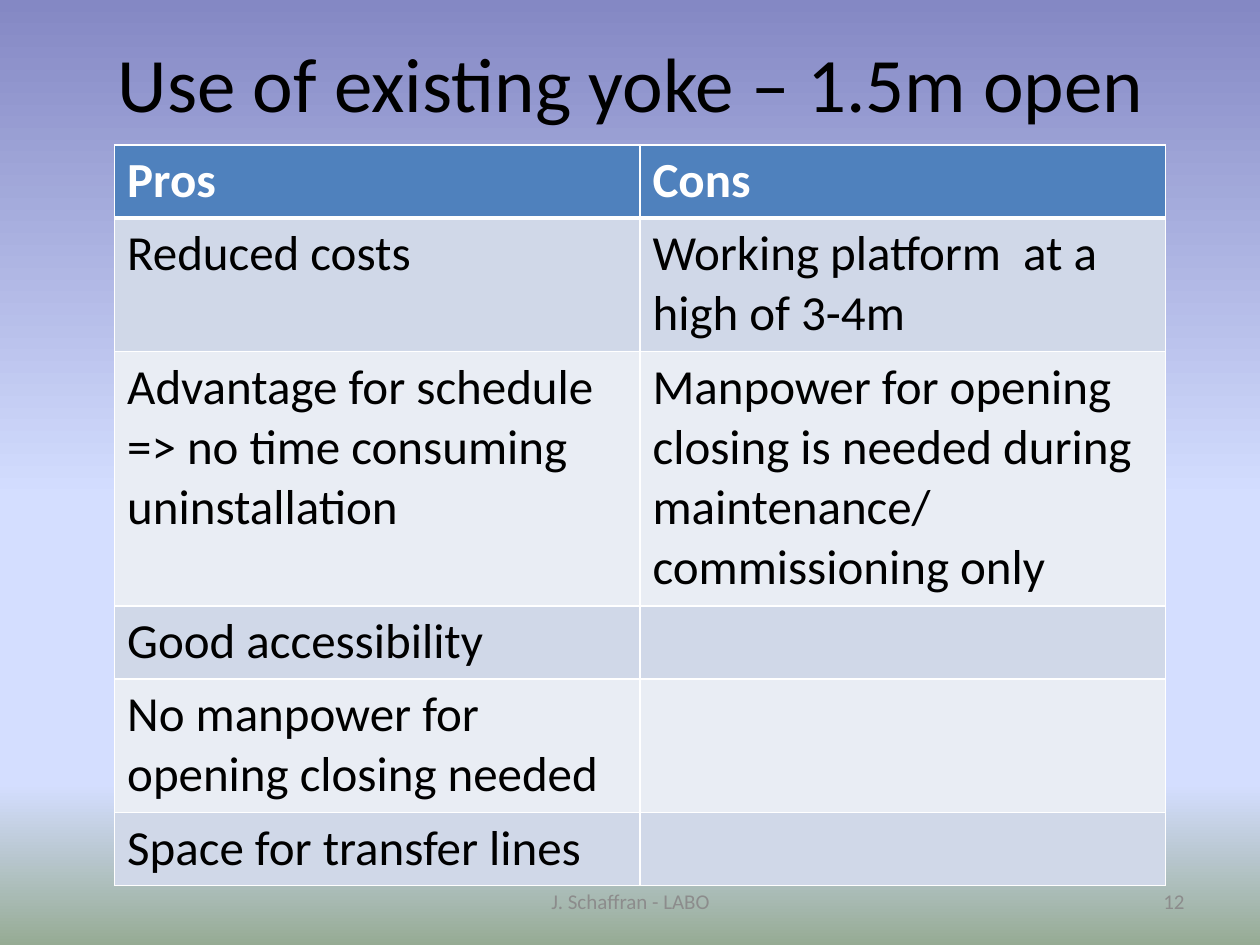
"""Build the slide that weighs the pros and cons of the existing yoke."""
from lxml import etree
from pptx import Presentation
from pptx.dml.color import RGBColor
from pptx.enum.text import MSO_ANCHOR, PP_ALIGN
from pptx.oxml.ns import qn
from pptx.util import Inches, Pt

MID = MSO_ANCHOR.MIDDLE
MEAN, RIGHT, LEFT = PP_ALIGN.CENTER, PP_ALIGN.RIGHT, PP_ALIGN.LEFT
HUES = {"ink": "000000", "pale": "FFFFFF", "head": "4F81BD",
        "odd": "D0D8E8", "even": "E9EDF4", "foot": "8C8C8C"}
SKY = [(0, "8488C4"), (53, "D4DEFF"), (83, "D4DEFF"), (100, "96AB94")]
ROWS = [
    ("Pros", "Cons", 1),
    ("Reduced costs", "Working platform  at a high of 3-4m", 2),
    ("Advantage for schedule => no time consuming uninstallation",
     "Manpower for opening closing is needed during maintenance/ commissioning only", 4),
    ("Good accessibility", "", 1),
    ("No manpower for opening closing needed", "", 2),
    ("Space for transfer lines", "", 1),
]
LABELS = [
    ("Use of existing yoke – 1.5m open", (0.51, 0.02, 9, 1.25), 44, "ink", MEAN),
    ("J. Schaffran - LABO", (3.42, 6.95, 3.17, 0.4), 12, "foot", MEAN),
    ("12", (7.17, 6.95, 2.33, 0.4), 12, "foot", RIGHT),
]
LINE, PAD, COL = 0.48, 0.1, 4.17


def write(frame, text, size, hue, side, bold=False):
    para = frame.paragraphs[0]
    para.alignment = side
    run = para.add_run()
    run.text = text
    for key, val in {"name": "Calibri", "size": Pt(size), "bold": bold}.items():
        setattr(run.font, key, val)
    run.font.color.rgb = RGBColor.from_string(HUES[hue])


def paint(node, hue):
    fill = etree.SubElement(node, qn("a:solidFill"))
    etree.SubElement(fill, qn("a:srgbClr"), val=hue)


deck = Presentation()
deck.slide_width, deck.slide_height = Inches(10), Inches(7.5)
slide = deck.slides.add_slide(deck.slide_layouts[6])

back = slide.background.fill
back.gradient()
back.gradient_angle = 270
stops = next(slide.element.iter(qn("a:gsLst")))
for old in list(stops):
    stops.remove(old)
for share, hue in SKY:
    stop = etree.SubElement(stops, qn("a:gs"), pos=str(share * 1000))
    etree.SubElement(stop, qn("a:srgbClr"), val=hue)

for text, place, size, hue, side in LABELS:
    frame = slide.shapes.add_textbox(*map(Inches, place)).text_frame
    frame.word_wrap = True
    frame.vertical_anchor = MID
    write(frame, text, size, hue, side)

high = sum(PAD + LINE * row[2] for row in ROWS)
grid = slide.shapes.add_table(len(ROWS), 2, Inches(0.91), Inches(1.15),
                              Inches(2 * COL), Inches(high)).table
for col in grid.columns:
    col.width = Inches(COL)
for r, (*words, lines) in enumerate(ROWS):
    grid.rows[r].height = Inches(PAD + LINE * lines)
    top = r == 0
    shade = "head" if top else "odd" if r % 2 else "even"
    for c, text in enumerate(words):
        cell = grid.cell(r, c)
        cell.fill.solid()
        cell.fill.fore_color.rgb = RGBColor.from_string(HUES[shade])
        if text:
            write(cell.text_frame, text, 28, "pale" if top else "ink", LEFT, top)
        props = cell._tc.get_or_add_tcPr()
        for i, edge in enumerate("LRTB"):
            thick = 3 if (r, edge) in ((0, "B"), (1, "T")) else 1
            rule = etree.Element(qn(f"a:ln{edge}"), w=str(Pt(thick)))
            paint(rule, HUES["pale"])
            props.insert(i, rule)

deck.save("out.pptx")
